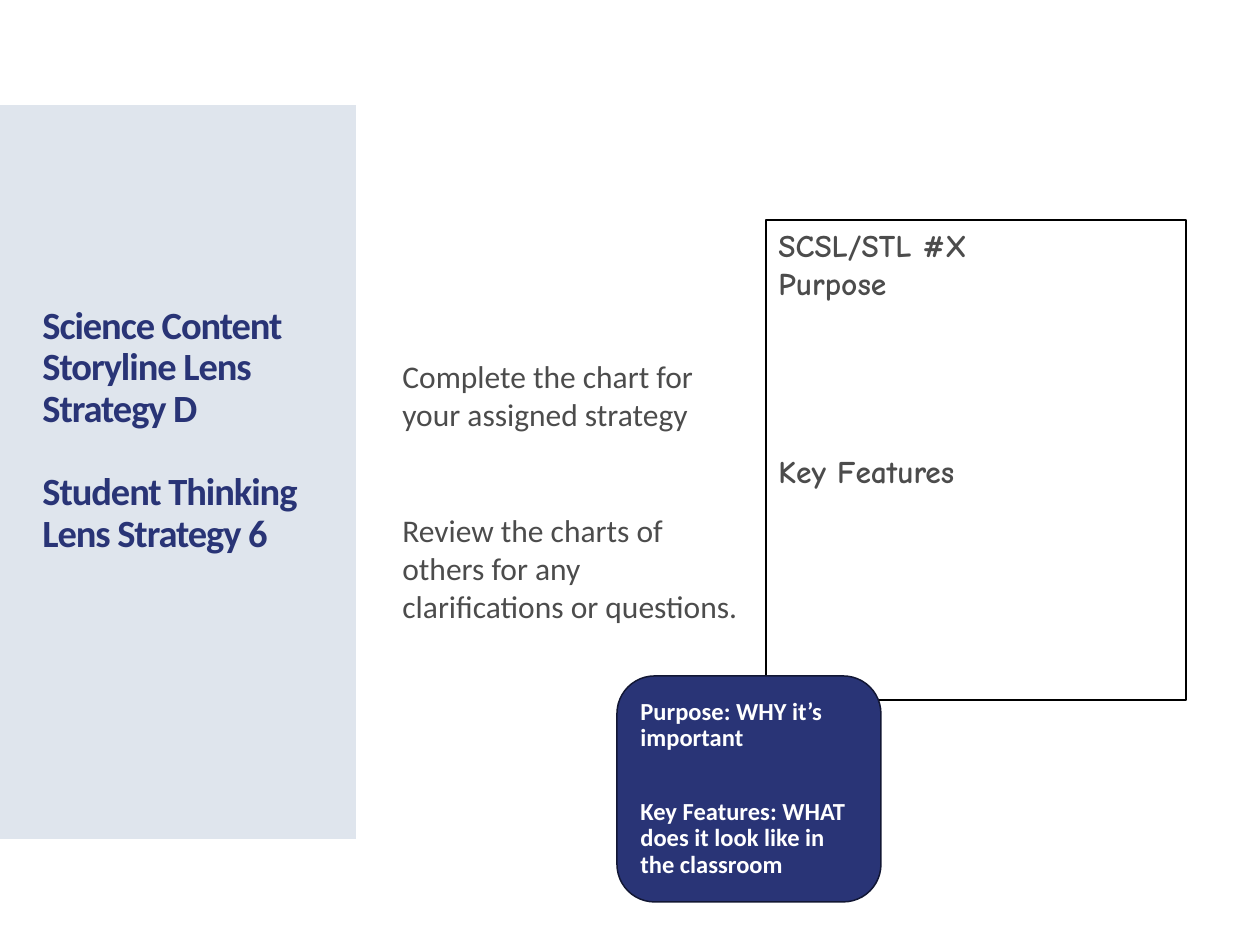
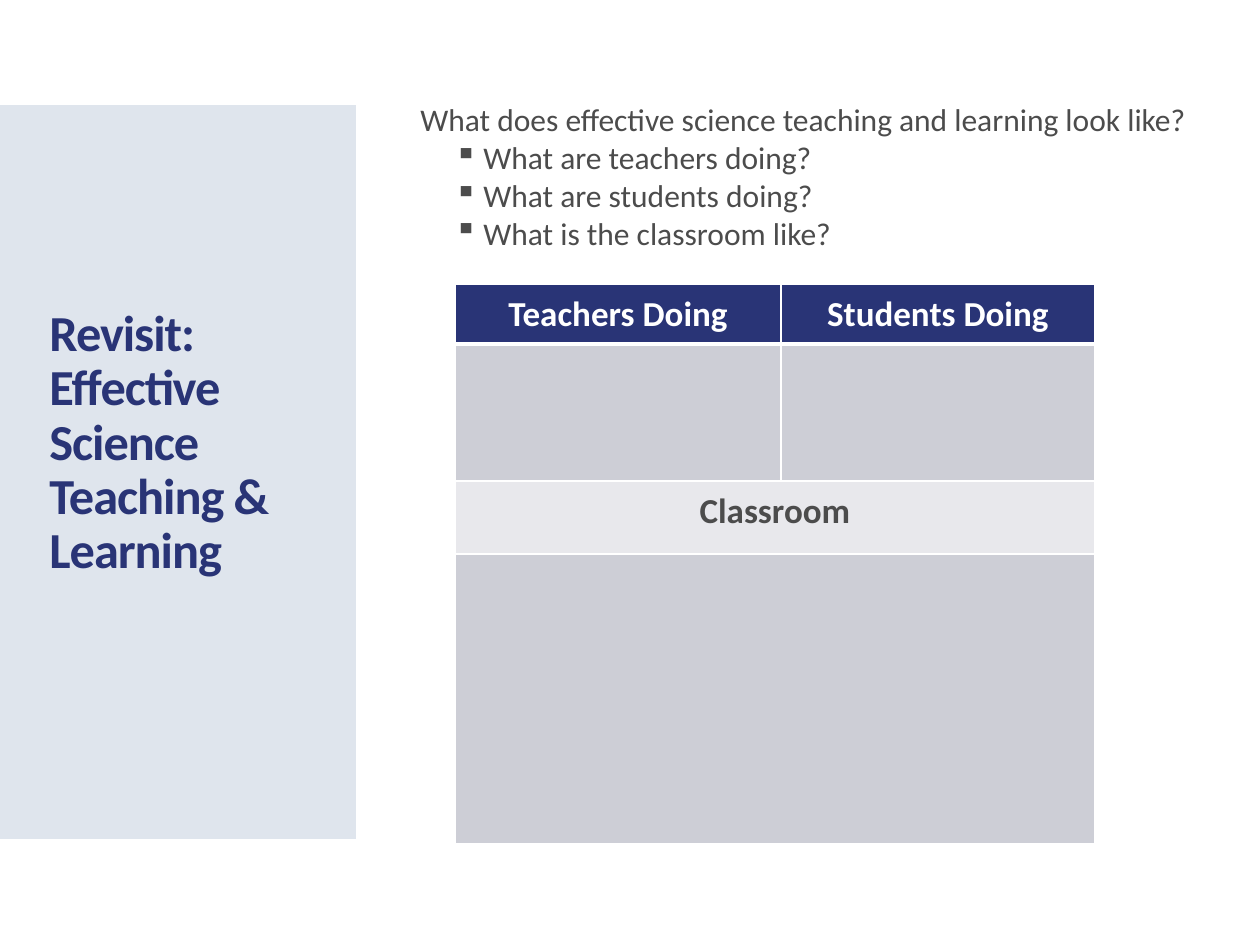
import dataclasses

import lxml.etree
import pptx
import pptx.dml.color
import pptx.enum.shapes
import pptx.enum.text
import pptx.oxml.ns
import pptx.util

ANCHOR = pptx.enum.text.MSO_ANCHOR
ALIGN = pptx.enum.text.PP_ALIGN
SHAPE = pptx.enum.shapes.MSO_SHAPE
PX_PER_INCH = 126


@dataclasses.dataclass(frozen=True)
class Theme:
    navy: str = "293476"
    navy_edge: str = "121734"
    band: str = "DFE5ED"
    ink: str = "4C4C4C"
    white: str = "FFFFFF"
    black: str = "000000"
    cell_dark: str = "CDCED6"
    cell_light: str = "E8E8EC"
    font: str = "Calibri"
    hand_font: str = "Comic Neue"
    body: float = 18
    note: float = 14
    table_head: float = 20
    title_small: float = 22
    title_large: float = 28.8


THEME = Theme()


def px(length):
    return round(length * 914400 / PX_PER_INCH)


def color(value):
    return pptx.dml.color.RGBColor.from_string(value)


def add_box(page, box, kind=SHAPE.RECTANGLE, fill=None, line=None, width=1):
    shape = page.shapes.add_shape(kind, *map(px, box))
    shape.shadow.inherit = False
    if fill:
        shape.fill.solid()
        shape.fill.fore_color.rgb = color(fill)
    else:
        shape.fill.background()
    if line:
        shape.line.color.rgb = color(line)
        shape.line.width = pptx.util.Pt(width)
    else:
        shape.line.fill.background()
    return shape


def add_text_box(page, box):
    return page.shapes.add_textbox(*map(px, box))


def format_para(para, size, ink, bold=False, font=THEME.font, align=ALIGN.LEFT):
    para.alignment = align
    for span in para.runs:
        span.font.name = font
        span.font.size = pptx.util.Pt(size)
        span.font.bold = bold
        span.font.color.rgb = color(ink)


def write(shape, lines, gaps, anchor=ANCHOR.TOP, spacing=1.0, **style):
    """Write one paragraph per line; gaps are points before each later one."""
    frame = shape.text_frame
    frame.word_wrap = True
    frame.vertical_anchor = anchor
    frame.text = "\n".join(lines)
    for para, gap in zip(frame.paragraphs, [0, *gaps]):
        para.space_before = pptx.util.Pt(gap)
        para.line_spacing = spacing
        format_para(para, **style)


def add_bullet(para, margin, hanging):
    props = para._p.get_or_add_pPr()
    props.set("marL", str(px(margin)))
    props.set("indent", str(-px(hanging)))
    mark = lxml.etree.SubElement(props, pptx.oxml.ns.qn("a:buChar"))
    mark.set("char", "▪")


def add_side_title(page, box, lines, size, gaps=()):
    # Shared pale band with a tight navy title on it
    add_box(page, (0, 105, 356, 734), fill=THEME.band)
    title = add_text_box(page, box)
    write(title, lines, gaps, ANCHOR.BOTTOM, 0.9,
          size=size, ink=THEME.navy, bold=True)
    for para in title.text_frame.paragraphs:
        for span in para.runs:
            span.font._element.set("spc", "-60")


def set_borders(cell, bottom):
    props = cell._tc.get_or_add_tcPr()
    widths = {"lnL": 1, "lnR": 1, "lnT": 1, "lnB": bottom}
    for place, (side, width) in enumerate(widths.items()):
        line = lxml.etree.Element(pptx.oxml.ns.qn("a:" + side))
        line.set("w", str(pptx.util.Pt(width)))
        fill = lxml.etree.SubElement(line, pptx.oxml.ns.qn("a:solidFill"))
        paint = lxml.etree.SubElement(fill, pptx.oxml.ns.qn("a:srgbClr"))
        paint.set("val", THEME.white)
        props.insert(place, line)


def add_doing_table(page, box, columns, rows):
    table = page.shapes.add_table(len(rows), len(columns), *map(px, box)).table
    table.first_row = table.horz_banding = False
    for column, width in zip(table.columns, columns):
        column.width = px(width)
    for row, height in zip(table.rows, rows):
        row.height = px(height)

    # Fills and white rules
    fills = (THEME.navy, THEME.cell_dark, THEME.cell_light, THEME.cell_dark)
    for index, (row, fill) in enumerate(zip(table.rows, fills)):
        for cell in row.cells:
            cell.fill.solid()
            cell.fill.fore_color.rgb = color(fill)
            set_borders(cell, 3 if index == 0 else 1)
    for index in (2, 3):
        table.cell(index, 0).merge(table.cell(index, 1))

    # Headings
    headings = (
        (0, 0, "Teachers Doing", THEME.white),
        (0, 1, "Students Doing", THEME.white),
        (2, 0, "Classroom", THEME.ink),
    )
    for row, column, text, ink in headings:
        cell = table.cell(row, column)
        cell.margin_left = cell.margin_right = px(18)
        cell.margin_top = cell.margin_bottom = px(9)
        cell.text = text
        format_para(cell.text_frame.paragraphs[0], THEME.table_head, ink,
                    bold=True, align=ALIGN.CENTER)


def add_questions(page, box):
    questions = add_text_box(page, box)
    write(questions, [
        "What does effective science teaching and learning look like?",
        "What are teachers doing?",
        "What are students doing?",
        "What is the classroom like?",
    ], (0, 0, 0), size=THEME.body, ink=THEME.ink)
    for para in questions.text_frame.paragraphs[1:]:
        add_bullet(para, margin=63, hanging=29)


def build_strategy_page(page):
    add_side_title(page, (30, 219, 294, 343), [
        "Science Content Storyline Lens Strategy D",
        "Student Thinking Lens Strategy 6",
    ], THEME.title_small, gaps=[24])

    # Sample chart to fill in
    chart_sheet = add_box(page, (766, 220, 420, 480), line=THEME.black, width=1.25)
    write(chart_sheet, ["SCSL/STL #X", "Purpose", "Key Features"], (0, 86),
          size=THEME.body, ink=THEME.ink, bold=True, font=THEME.hand_font)

    # Reminder of what each heading means
    reminder = add_box(page, (617, 676, 264, 226), SHAPE.ROUNDED_RECTANGLE,
                       THEME.navy, THEME.navy_edge, 0.85)
    write(reminder, [
        "Purpose: WHY it’s important",
        "Key Features: WHAT does it look like in the classroom",
    ], [27], ANCHOR.MIDDLE, 0.9, size=THEME.note, ink=THEME.white, bold=True)

    # Instructions
    instructions = add_text_box(page, (390, 270, 360, 442))
    write(instructions, [
        "Complete the chart for your assigned strategy",
        "Review the charts of others for any clarifications or questions.",
    ], [45], ANCHOR.MIDDLE, size=THEME.body, ink=THEME.ink)


def build_revisit_page(page):
    add_side_title(page, (37, 284, 294, 302), [
        "Revisit:", "Effective Science Teaching & Learning",
    ], THEME.title_large, gaps=[0])
    add_doing_table(page, (455, 284, 640, 560),
                    columns=(326, 314), rows=(60, 137, 73, 290))
    add_questions(page, (408, 94, 800, 165))


def main():
    deck = pptx.Presentation()
    deck.slide_width = px(1260)
    deck.slide_height = px(945)
    for build in (build_strategy_page, build_revisit_page):
        build(deck.slides.add_slide(deck.slide_layouts[6]))
    deck.save("out.pptx")


if __name__ == "__main__":
    main()
